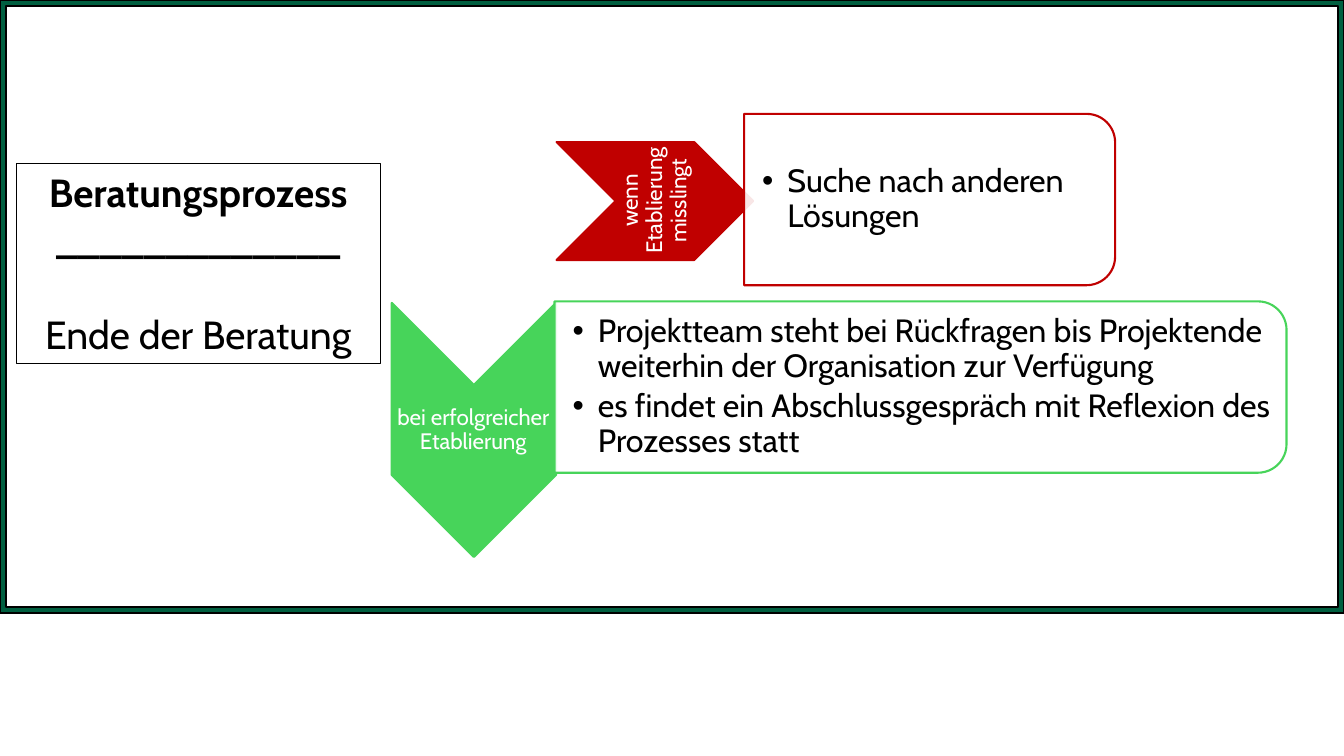
"""Build the slide on how the consulting process ends."""
from dataclasses import dataclass

from lxml import etree
from pptx import Presentation
from pptx import util as u
from pptx.dml.color import RGBColor
from pptx.enum import shapes, text
from pptx.oxml.ns import qn

FONT = "Cabin"
BLACK = RGBColor(0x00, 0x00, 0x00)
WHITE = RGBColor(0xFF, 0xFF, 0xFF)
DARK_GREEN = RGBColor(0x00, 0x5F, 0x40)
RED = RGBColor(0xC0, 0x00, 0x00)
GREEN = RGBColor(0x47, 0xD4, 0x5A)


@dataclass(frozen=True)
class Box:
    left: float
    top: float
    width: float
    height: float

    def lengths(self) -> tuple:
        return tuple(u.Inches(v) for v in (self.left, self.top, self.width, self.height))


@dataclass(frozen=True)
class Outcome:
    color: RGBColor
    arrow: Box
    arrow_turn: int
    condition: str
    condition_box: Box
    condition_turn: int
    panel: Box
    steps: tuple[str, ...]
    steps_box: Box


OUTCOMES = (
    Outcome(RED, Box(5.52, 1.41, 1.95, 1.17), 0,
            "wenn Etablierung misslingt", Box(5.91, 1.6, 1.17, 0.78), 270,
            Box(8.37, 0.14, 1.7, 3.68),
            ("Suche nach anderen Lösungen",), Box(7.38, 1.21, 3.6, 1.54)),
    Outcome(GREEN, Box(3.44, 3.45, 2.52, 1.63), 90,
            "bei erfolgreicher Etablierung", Box(3.88, 3.82, 1.63, 0.89), 0,
            Box(8.28, 0.21, 1.7, 7.26),
            ("Projektteam steht bei Rückfragen bis Projektende weiterhin der "
             "Organisation zur Verfügung",
             "es findet ein Abschlussgespräch mit Reflexion des Prozesses statt"),
            Box(5.5, 3.07, 7.18, 1.54)),
)


def add_outline(slide, kind, box: Box, fill: RGBColor, line: RGBColor, turn: int = 0):
    shape = slide.shapes.add_shape(kind, *box.lengths())
    shape.rotation = turn
    shape.shadow.inherit = False
    shape.fill.solid()
    shape.fill.fore_color.rgb = fill
    shape.line.color.rgb = line
    shape.line.width = u.Pt(1.5)
    return shape


def add_text(slide, box: Box, lines: tuple[str, ...], size: int, color: RGBColor,
             left_inset: float, inset: float, bulleted: bool, turn: int = 0) -> None:
    textbox = slide.shapes.add_textbox(*box.lengths())
    textbox.rotation = turn
    frame = textbox.text_frame
    frame.word_wrap = True
    frame.vertical_anchor = text.MSO_ANCHOR.MIDDLE
    frame.margin_left = u.Inches(left_inset)
    frame.margin_top = frame.margin_right = frame.margin_bottom = u.Inches(inset)
    frame.text = "\n".join(lines)
    for paragraph in frame.paragraphs:
        if bulleted:
            add_bullet(paragraph)
            paragraph.space_after = u.Pt(4)
        else:
            paragraph.alignment = text.PP_ALIGN.CENTER
        paragraph.line_spacing = 0.9
        style_runs(paragraph, size, color)


def add_bullet(paragraph) -> None:
    properties = paragraph._p.get_or_add_pPr()
    properties.set("marL", str(u.Inches(0.25)))
    properties.set("indent", str(u.Inches(-0.25)))
    etree.SubElement(properties, qn("a:buFont")).set("typeface", "Arial")
    etree.SubElement(properties, qn("a:buChar")).set("char", "•")


def style_runs(paragraph, size: int, color: RGBColor, bold: bool = False) -> None:
    for run in paragraph.runs:
        run.font.name = FONT
        run.font.size = u.Pt(size)
        run.font.bold = bold
        run.font.color.rgb = color


def set_title(slide) -> None:
    title = slide.shapes.title
    title.left, title.top, title.width, title.height = Box(0.16, 1.62, 3.61, 1.99).lengths()
    title.line.color.rgb = BLACK
    title.line.width = u.Pt(0.75)
    frame = title.text_frame
    frame.word_wrap = True
    frame.auto_size = text.MSO_AUTO_SIZE.NONE
    frame.vertical_anchor = text.MSO_ANCHOR.TOP
    frame.text = "Beratungsprozess _____________\nEnde der Beratung"
    heading, stage = frame.paragraphs
    stage.space_before = u.Pt(34)
    for paragraph in (heading, stage):
        paragraph.alignment = text.PP_ALIGN.CENTER
        style_runs(paragraph, 28, BLACK, bold=paragraph is heading)


def add_outcome(slide, outcome: Outcome) -> None:
    add_outline(slide, shapes.MSO_SHAPE.CHEVRON, outcome.arrow,
                outcome.color, outcome.color, outcome.arrow_turn)
    add_text(slide, outcome.condition_box, (outcome.condition,), 16, WHITE,
             0.01, 0.01, False, outcome.condition_turn)
    panel = add_outline(slide, shapes.MSO_SHAPE.ROUND_2_SAME_RECTANGLE, outcome.panel,
                        WHITE, outcome.color, 90)
    panel_color = panel._element.spPr.find(qn("a:solidFill"))[0]
    etree.SubElement(panel_color, qn("a:alpha")).set("val", "90000")
    add_text(slide, outcome.steps_box, outcome.steps, 23, BLACK, 0.18, 0.02, True)


def main() -> None:
    deck = Presentation()
    deck.slide_width, deck.slide_height = u.Inches(13.33), u.Inches(7.5)
    slide = deck.slides.add_slide(deck.slide_layouts[5])
    border = add_outline(slide, shapes.MSO_SHAPE.FRAME, Box(0, 0, 13.33, 6.08),
                         DARK_GREEN, BLACK)
    border.adjustments[0] = 0.01
    for outcome in OUTCOMES:
        add_outcome(slide, outcome)
    set_title(slide)
    deck.save("out.pptx")


if __name__ == "__main__":
    main()
